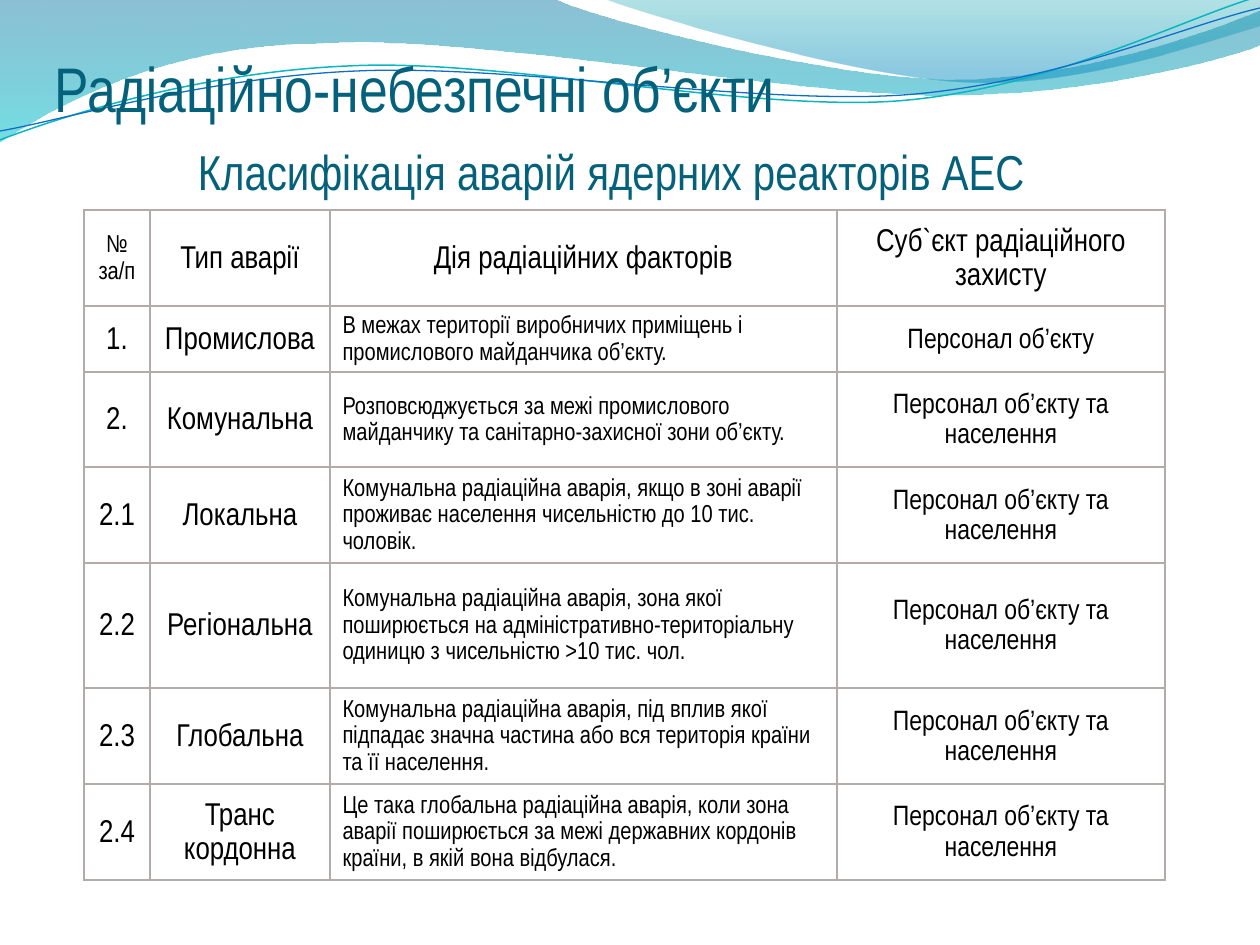
from dataclasses import dataclass
from math import cos, radians, sin

from lxml.etree import Element, SubElement
from pptx import Presentation
from pptx.dml.color import RGBColor
from pptx.enum.text import MSO_ANCHOR, PP_ALIGN
from pptx.oxml import parse_xml
from pptx.oxml.ns import nsdecls, qn
from pptx.util import Emu, Pt

EMU_PER_PIXEL = 914400 / 126
FONT = "Arial Narrow"
CELL_LINE_RATIO = 1.08

WHITE = RGBColor(0xFF, 0xFF, 0xFF)
BLACK = RGBColor(0x00, 0x00, 0x00)
HEADING = RGBColor(0x04, 0x61, 0x7B)
BORDER = RGBColor(0xB4, 0xAA, 0xAA)
DEEP_BLUE = RGBColor(0x00, 0x74, 0xA0)
CYAN = RGBColor(0x00, 0xC4, 0xCD)
SKY_BLUE = RGBColor(0x00, 0x8A, 0xBF)
TEAL = RGBColor(0x00, 0xA0, 0xA8)
LINE_TEAL = RGBColor(0x09, 0xB7, 0xBF)
LINE_BLUE = RGBColor(0x0F, 0x6F, 0xC6)

Point = tuple[float, float]
Segments = list[tuple[Point, ...]]


@dataclass(frozen=True)
class GradientStop:
    position: float
    color: RGBColor
    opacity: int


@dataclass(frozen=True)
class Wave:
    """Each segment holds one point for a straight side or three for a curve."""
    start: Point
    segments: Segments
    stops: tuple[GradientStop, ...]
    angle: int


@dataclass(frozen=True)
class WaveLine:
    start: Point
    segments: Segments
    center: Point
    color: RGBColor
    width: float


@dataclass(frozen=True)
class Heading:
    text: str
    box: tuple[int, int, int, int]
    size: int
    alignment: PP_ALIGN
    right_inset: int


WAVES = [
    Wave((0, 0), [
        ((554, -1),),
        ((600, 21), (837, 79), (955, 79)),
        ((1075, 79), (1207, 33), (1260, 11)),
        ((1261, 45),),
        ((1239, 55), (1096, 96), (940, 95)),
        ((784, 95), (481, 35), (324, 43)),
        ((163, 44), (58, 105), (-1, 142)),
    ], (GradientStop(0, DEEP_BLUE, 45), GradientStop(1, CYAN, 55)), 270),
    Wave((604, -1), [
        ((641, 14), (859, 78), (969, 82)),
        ((1079, 87), (1211, 40), (1260, 26)),
        ((1260, 0),),
    ], (GradientStop(0.2, SKY_BLUE, 45), GradientStop(1, TEAL, 30)), 90),
]
LINE_ROTATION = -2.7
WAVE_LINES = [
    WaveLine((0, 140), [
        ((60, 117), (199, 72), (349, 66)),
        ((498, 58), (747, 112), (898, 101)),
        ((1050, 89), (1182, 19), (1257, -3)),
    ], (629, 72), LINE_TEAL, 0.85),
    WaveLine((0, 131), [
        ((59, 121), (207, 77), (357, 71)),
        ((508, 64), (752, 105), (903, 95)),
        ((1053, 84), (1186, 25), (1260, 8)),
    ], (629, 74), LINE_BLUE, 0.75),
]
HEADINGS = [
    Heading("Радіаційно-небезпечні об’єкти", (55, 45, 1134, 80), 36, PP_ALIGN.LEFT, 0),
    Heading("Класифікація аварій ядерних реакторів АЕС", (50, 132, 1134, 68), 28,
            PP_ALIGN.CENTER, 12),
]

TABLE_ORIGIN = (84, 210)
COLUMN_WIDTHS = [66, 180, 507, 328]
ROW_HEIGHTS = [96, 66, 95, 96, 125, 96, 96]
HEADER_SIZES = [14, 18, 18, 18]
BODY_SIZES = [18, 18, 14, 16]
DESCRIPTION_COLUMN = 2
STAFF = "Персонал об’єкту"
STAFF_AND_PUBLIC = "Персонал об’єкту та населення"
ROWS = [
    ("№ за/п", "Тип аварії", "Дія радіаційних факторів", "Суб`єкт радіаційного захисту"),
    ("1.", "Промислова",
     "В межах території виробничих приміщень і промислового майданчика об’єкту.", STAFF),
    ("2.", "Комунальна",
     "Розповсюджується за межі промислового\nмайданчику та санітарно-захисної зони об’єкту.",
     STAFF_AND_PUBLIC),
    ("2.1", "Локальна",
     "Комунальна радіаційна аварія, якщо в зоні аварії проживає населення чисельністю "
     "до 10 тис. чоловік.", STAFF_AND_PUBLIC),
    ("2.2", "Регіональна",
     "Комунальна радіаційна аварія, зона якої поширюється на адміністративно-територіальну "
     "одиницю з чисельністю >10 тис. чол.", STAFF_AND_PUBLIC),
    ("2.3", "Глобальна",
     "Комунальна радіаційна аварія, під вплив якої підпадає значна частина або вся "
     "територія країни та її населення.", STAFF_AND_PUBLIC),
    ("2.4", "Транс\nкордонна",
     "Це така глобальна радіаційна аварія, коли зона аварії поширюється за межі державних "
     "кордонів країни, в якій вона відбулася.", STAFF_AND_PUBLIC),
]


def px(length: float) -> Emu:
    return Emu(round(length * EMU_PER_PIXEL))


def set_attributes(target, values: dict) -> None:
    for name, value in values.items():
        setattr(target, name, value)


def turn(point: Point, center: Point, degrees: float) -> Point:
    angle = radians(degrees)
    dx, dy = point[0] - center[0], point[1] - center[1]
    return (center[0] + dx * cos(angle) - dy * sin(angle),
            center[1] + dx * sin(angle) + dy * cos(angle))


def add_outline(slide, start: Point, segments: Segments, closed: bool):
    """Build the outline from its control points, then bend the curved segments."""
    points = [(px(x), px(y)) for x, y in [start, *sum(segments, ())]]
    builder = slide.shapes.build_freeform(*points[0], scale=1.0)
    builder.add_line_segments(points[1:], close=closed)
    shape = builder.convert_to_shape()
    shape.shadow.inherit = False
    sides = iter(list(shape._element.spPr.iter(qn("a:lnTo"))))
    for segment in segments:
        parts = [next(sides) for _ in segment]
        if len(parts) == 3:
            curve = Element(qn("a:cubicBezTo"))
            parts[0].addprevious(curve)
            for part in parts:
                curve.append(part[0])
                part.getparent().remove(part)
    return shape


def add_wave(slide, wave: Wave) -> None:
    shape = add_outline(slide, wave.start, wave.segments, True)
    shape.line.fill.background()
    shape.fill.gradient()
    shape.fill.gradient_angle = wave.angle
    for target, stop in zip(shape.fill.gradient_stops, wave.stops):
        target.position = stop.position
        target.color.rgb = stop.color
    colors = shape._element.spPr.iter(qn("a:srgbClr"))
    for color, stop in zip(colors, wave.stops):
        SubElement(color, qn("a:alpha"), val=str(stop.opacity * 1000))


def add_wave_line(slide, line: WaveLine) -> None:
    start = turn(line.start, line.center, -LINE_ROTATION)
    segments = [tuple(turn(point, line.center, -LINE_ROTATION) for point in segment)
                for segment in line.segments]
    shape = add_outline(slide, start, segments, False)
    shape.rotation = LINE_ROTATION
    shape.fill.background()
    shape.line.color.rgb = line.color
    shape.line.width = Pt(line.width)


def format_text(text_frame, size: int, color: RGBColor, paragraph_values: dict) -> None:
    for paragraph in text_frame.paragraphs:
        set_attributes(paragraph, paragraph_values)
        for run in paragraph.runs:
            set_attributes(run.font, {"name": FONT, "size": Pt(size)})
            run.font.color.rgb = color


def add_heading(slide, heading: Heading) -> None:
    frame = slide.shapes.add_textbox(*map(px, heading.box)).text_frame
    set_attributes(frame, {
        "text": heading.text, "word_wrap": True, "vertical_anchor": MSO_ANCHOR.BOTTOM,
        "margin_left": 0, "margin_right": px(heading.right_inset), "margin_bottom": 0,
    })
    format_text(frame, heading.size, HEADING, {"alignment": heading.alignment})


def add_borders(cell) -> None:
    properties = cell._tc.get_or_add_tcPr()
    for index, side in enumerate(("lnL", "lnR", "lnT", "lnB")):
        properties.insert(index, parse_xml(
            f'<a:{side} {nsdecls("a")} w="{Pt(0.96)}"><a:solidFill>'
            f'<a:srgbClr val="{BORDER}"/></a:solidFill></a:{side}>'))


def add_accident_table(slide) -> None:
    size = (sum(COLUMN_WIDTHS), sum(ROW_HEIGHTS))
    table = slide.shapes.add_table(len(ROWS), len(COLUMN_WIDTHS),
                                   *map(px, TABLE_ORIGIN + size)).table
    set_attributes(table, {"first_row": False, "horz_banding": False})
    for column, width in zip(table.columns, COLUMN_WIDTHS):
        column.width = px(width)
    for row_index, (row, height, texts) in enumerate(zip(table.rows, ROW_HEIGHTS, ROWS)):
        row.height = px(height)
        sizes = BODY_SIZES if row_index else HEADER_SIZES
        for column_index, (cell, text) in enumerate(zip(row.cells, texts)):
            set_attributes(cell, {"text": text, "vertical_anchor": MSO_ANCHOR.MIDDLE})
            cell.fill.solid()
            cell.fill.fore_color.rgb = WHITE
            add_borders(cell)
            is_description = row_index and column_index == DESCRIPTION_COLUMN
            alignment = PP_ALIGN.LEFT if is_description else PP_ALIGN.CENTER
            font_size = sizes[column_index]
            format_text(cell.text_frame, font_size, BLACK,
                        {"alignment": alignment,
                         "line_spacing": Pt(font_size * CELL_LINE_RATIO)})


def main() -> None:
    presentation = Presentation()
    set_attributes(presentation, {"slide_width": px(1260), "slide_height": px(945)})
    slide = presentation.slides.add_slide(presentation.slide_layouts[6])
    for wave in WAVES:
        add_wave(slide, wave)
    for line in WAVE_LINES:
        add_wave_line(slide, line)
    title, subtitle = HEADINGS
    add_heading(slide, title)
    add_accident_table(slide)
    add_heading(slide, subtitle)
    presentation.save("out.pptx")


if __name__ == "__main__":
    main()
